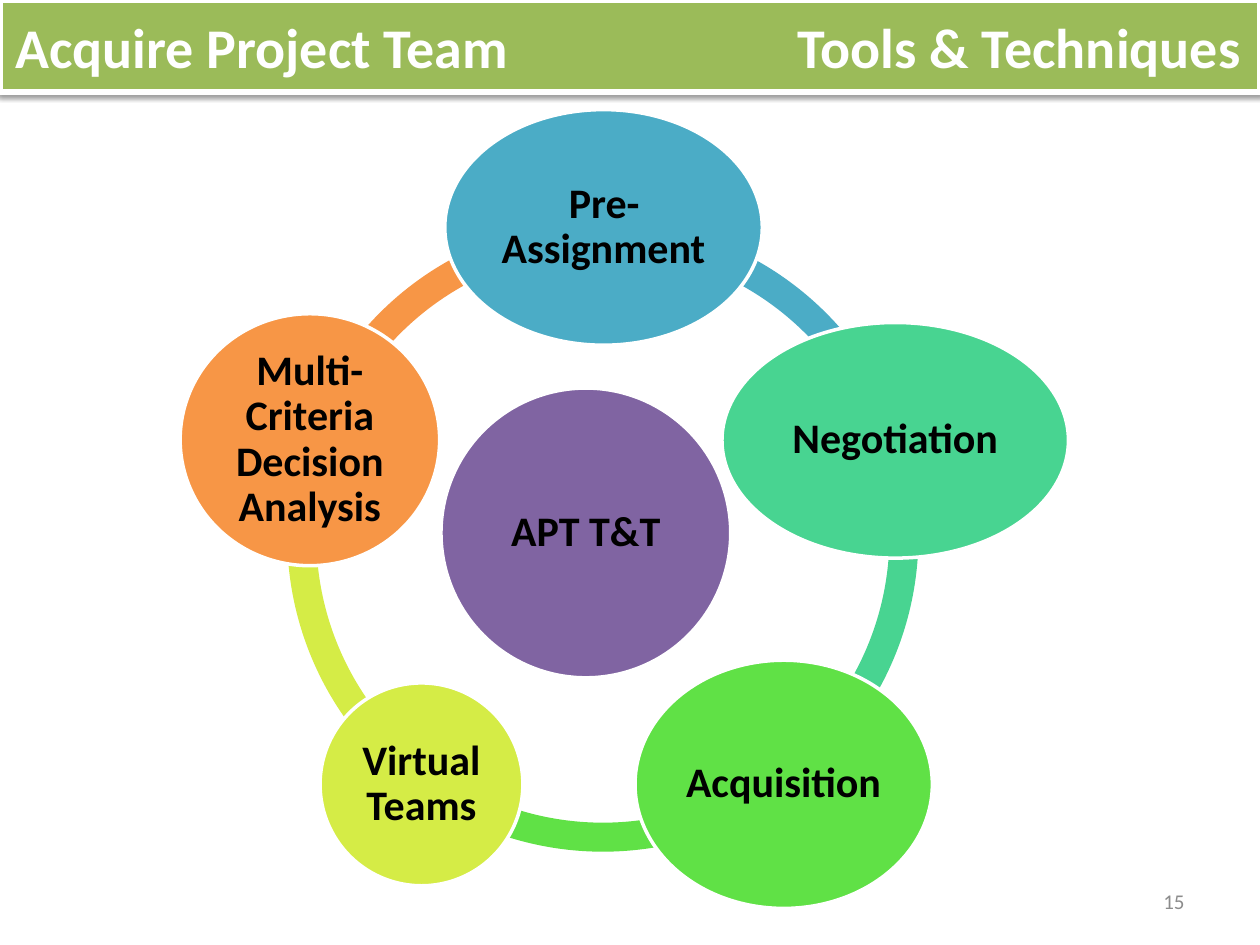
"""Build the Acquire Project Team tools and techniques cycle slide."""
from lxml.etree import SubElement
from pptx import Presentation
from pptx.dml.color import RGBColor
from pptx.enum.shapes import MSO_SHAPE as SHAPE
from pptx.enum.text import MSO_ANCHOR as ANCHOR, MSO_AUTO_SIZE as AUTO, PP_ALIGN as ALIGN
from pptx.oxml.ns import qn
from pptx.util import Inches, Pt

TITLE = "Acquire Project Team\tTools & Techniques"
PAGE = "15"
HUB = ("APT T&T", (3.5, 3.08, 2.3, 2.3), "8064A2")
NODES = [
    ("Pre-Assignment", (3.53, 0.87, 2.52, 1.87), "4BACC6"),
    ("Negotiation", (5.73, 2.56, 2.75, 1.87), "48D491"),
    ("Acquisition", (5.04, 5.24, 2.36, 1.97), "60E146"),
    ("Virtual Teams", (2.54, 5.42, 1.61, 1.61), "D5EC46"),
    ("Multi-Criteria Decision Analysis", (1.43, 2.49, 2.06, 2), "F79646"),
]
RING = (2.28, 1.75, 5.01, 5.01)
RING_WEIGHT = 0.046
ADJUST_PER_DEGREE = 0.6
THEME = {
    "font": "Calibri", "banner": "9BBB59", "light": "FFFFFF", "dark": "000000",
    "muted": "8C8C8C", "title": 32, "label": 24, "page": 12,
}


def rgb(key):
    return RGBColor.from_string(THEME.get(key, key))


def write(sp, text, size="label", color="dark", bold=True, align=ALIGN.CENTER,
          insets=(0.03, 0.03, 0.03, 0.03), spacing=None):
    tf = sp.text_frame
    tf.word_wrap, tf.auto_size, tf.vertical_anchor = True, AUTO.NONE, ANCHOR.MIDDLE
    tf.margin_left, tf.margin_top, tf.margin_right, tf.margin_bottom = map(Inches, insets)
    p = tf.paragraphs[0]
    p.alignment, p.line_spacing = align, spacing
    r = p.add_run()
    r.text = text
    r.font.name, r.font.size, r.font.bold = THEME["font"], Pt(THEME[size]), bold
    r.font.color.rgb = rgb(color)
    return p


def paint(sp, fill, line_width=None):
    sp.shadow.inherit = False
    sp.fill.solid()
    sp.fill.fore_color.rgb = rgb(fill)
    if line_width:
        sp.line.color.rgb = rgb("light")
        sp.line.width = Pt(line_width)
    else:
        sp.line.fill.background()


def add_banner(s):
    sp = s.shapes.title
    sp.left, sp.top, sp.width, sp.height = map(Inches, (0, 0, 10, 0.73))
    paint(sp, "banner", 3)
    effects = sp.element.spPr.find(qn("a:effectLst"))
    shadow = SubElement(effects, qn("a:outerShdw"), blurRad=str(Pt(3.1)),
                        dist=str(Pt(1.6)), dir="5400000", rotWithShape="0")
    color = SubElement(shadow, qn("a:srgbClr"), val=THEME["dark"])
    SubElement(color, qn("a:alpha"), val="38000")
    p = write(sp, TITLE, size="title", color="light", align=ALIGN.LEFT,
              insets=(0.12, 0.05, 0.1, 0.05))
    tabs = SubElement(p._p.get_or_add_pPr(), qn("a:tabLst"))
    SubElement(tabs, qn("a:tab"), pos=str(Inches(9.73)), algn="r")


def add_ring(s):
    step = 360 / len(NODES)
    for i, (_, _, color) in reversed(list(enumerate(NODES))):
        sp = s.shapes.add_shape(SHAPE.BLOCK_ARC, *map(Inches, RING))
        start = 270 + i * step
        for k, angle in enumerate((start, start + step)):
            sp.adjustments[k] = angle % 360 * ADJUST_PER_DEGREE
        sp.adjustments[2] = RING_WEIGHT
        paint(sp, color)


def add_circle(s, text, box, color):
    sp = s.shapes.add_shape(SHAPE.OVAL, *map(Inches, box))
    paint(sp, color, 2)
    write(sp, text, spacing=0.9)


def main():
    prs = Presentation()
    prs.slide_width, prs.slide_height = Inches(10), Inches(7.5)
    s = prs.slides.add_slide(prs.slide_layouts[5])
    add_banner(s)
    add_ring(s)
    for node in [HUB, *NODES]:
        add_circle(s, *node)
    page = s.shapes.add_textbox(*map(Inches, (7.17, 6.95, 2.33, 0.4)))
    write(page, PAGE, size="page", color="muted", bold=False, align=ALIGN.RIGHT,
          insets=(0.1, 0.05, 0.1, 0.05))
    prs.save("out.pptx")


if __name__ == "__main__":
    main()
